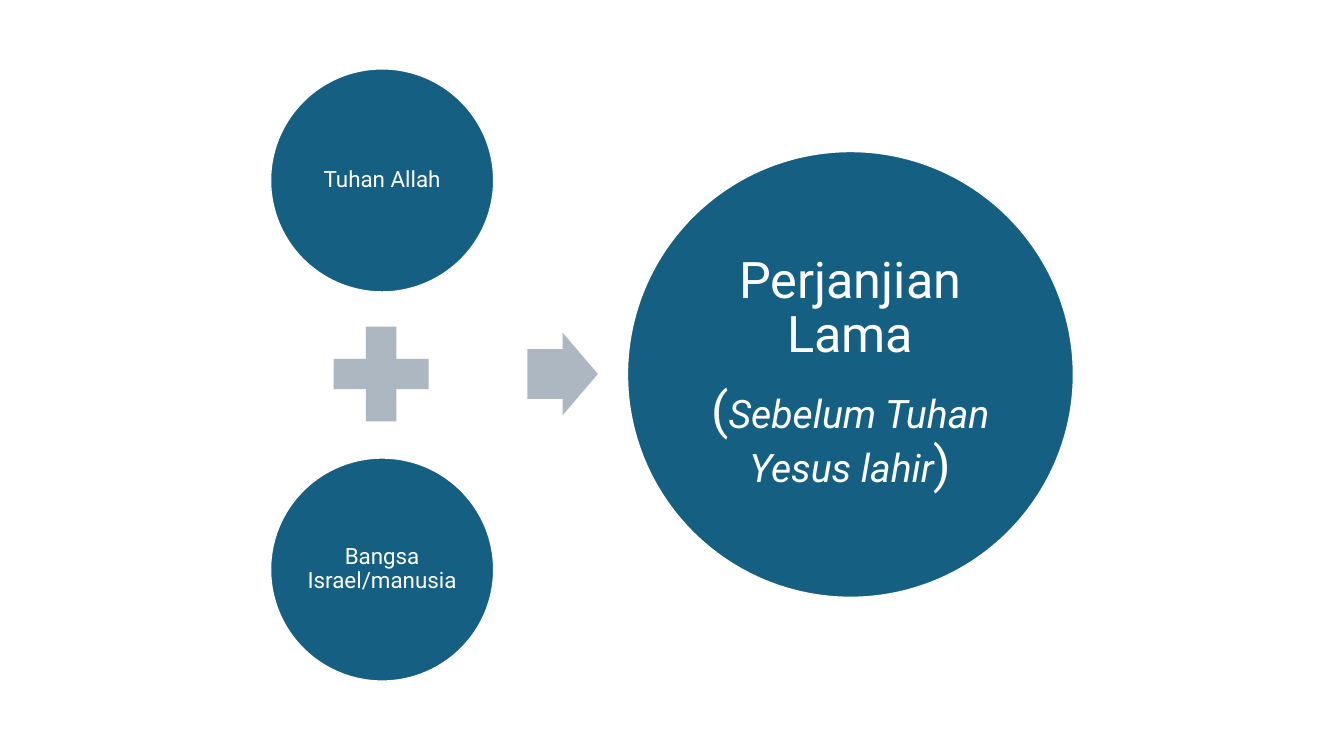
from pptx import Presentation
from pptx.dml.color import RGBColor
from pptx.enum import shapes, text
from pptx.util import Inches, Pt

BLUE, GREY, WHITE = "156082", "ACB7C1", "FFFFFF"


def add_symbol(kind, left, top, width, height, fill):
    shape = slide.shapes.add_shape(
        kind, Inches(left), Inches(top), Inches(width), Inches(height))
    shape.shadow.inherit = False
    shape.fill.solid()
    shape.fill.fore_color.rgb = RGBColor.from_string(fill)
    shape.line.fill.background()
    return shape


def add_circle(left, top, diameter, margin, paragraphs):
    """Each paragraph is a list of (text, size, italic) runs."""
    circle = add_symbol(shapes.MSO_SHAPE.OVAL, left, top, diameter, diameter, BLUE)
    circle.line.color.rgb = RGBColor.from_string(WHITE)
    circle.line.width = Pt(1.5)
    frame = circle.text_frame
    frame.word_wrap = True
    frame.vertical_anchor = text.MSO_ANCHOR.MIDDLE
    frame.margin_left = frame.margin_right = Inches(margin)
    frame.margin_top = frame.margin_bottom = Inches(margin)
    for index, runs in enumerate(paragraphs):
        paragraph = frame.add_paragraph() if index else frame.paragraphs[0]
        paragraph.alignment = text.PP_ALIGN.CENTER
        paragraph.line_spacing = 0.9
        if index < len(paragraphs) - 1:
            paragraph.space_after = Pt(15)
        for words, size, italic in runs:
            run = paragraph.add_run()
            run.text = words
            run.font.name = "Roboto"
            run.font.size = Pt(size)
            run.font.italic = italic
            run.font.color.rgb = RGBColor.from_string(WHITE)


presentation = Presentation()
presentation.slide_width, presentation.slide_height = Inches(13.33), Inches(7.5)
slide = presentation.slides.add_slide(presentation.slide_layouts[6])

# The two parties, one above the other
for top, party in ((0.68, "Tuhan Allah"), (4.54, "Bangsa Israel/manusia")):
    add_circle(2.68, top, 2.22, 0.02, [[(party, 16, False)]])

# Plus sign between them and arrow to the result
add_symbol(shapes.MSO_SHAPE.MATH_PLUS, 3.14, 3.07, 1.28, 1.28, GREY)
arrow = add_symbol(shapes.MSO_SHAPE.RIGHT_ARROW, 5.23, 3.3, 0.7, 0.82, GREY)
arrow.adjustments[0] = 0.6
arrow.adjustments[1] = 0.5

# The resulting covenant
add_circle(6.22, 1.5, 4.43, 0.05, [
    [("Perjanjian Lama", 36, False)],
    [("(", 36, False), ("Sebelum Tuhan Yesus lahir", 28, True), (")", 36, False)],
])

presentation.save("out.pptx")
